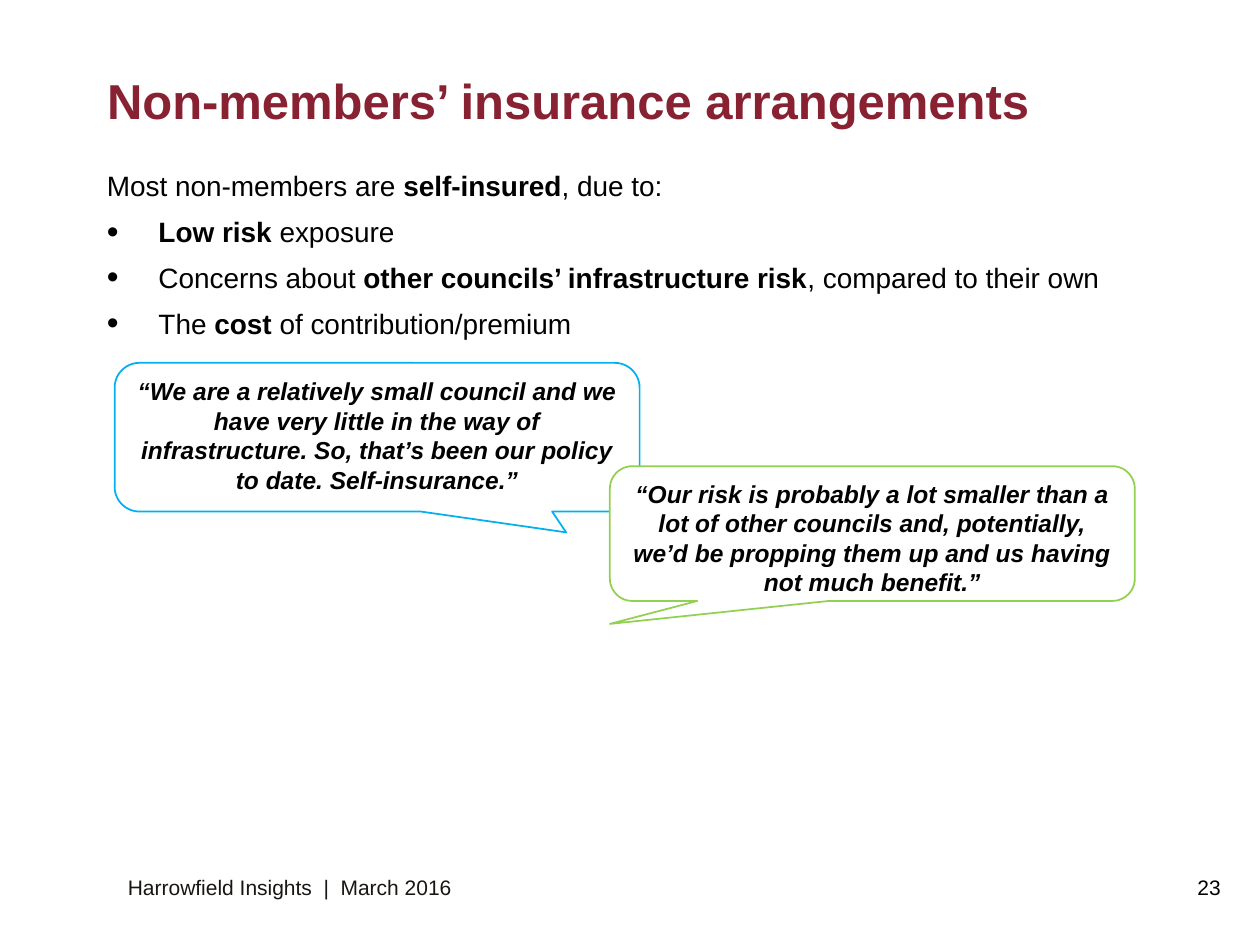
from lxml.etree import SubElement
from pptx import Presentation
from pptx.dml.color import RGBColor
from pptx.enum.shapes import MSO_SHAPE as Shape
from pptx.enum.text import MSO_ANCHOR as Anchor, PP_ALIGN as Align
from pptx.oxml.ns import qn
from pptx.util import Inches, Pt

COLUMNS, ROWS = 120, 90
SLIDE_WIDTH, SLIDE_HEIGHT = Inches(10), Inches(7.5)
BLACK = RGBColor(0x00, 0x00, 0x00)
CHARCOAL = RGBColor(0x18, 0x15, 0x12)
WHITE = RGBColor(0xFF, 0xFF, 0xFF)
MAROON = RGBColor(0x88, 0x22, 0x33)
BLUE = RGBColor(0x00, 0xB0, 0xF0)
GREEN = RGBColor(0x92, 0xD0, 0x50)

# Each reason is a list of (text, bold) runs.
LEAD = [("Most non-members are ", False), ("self-insured", True), (", due to:", False)]
REASONS = [
    [("Low risk ", True), ("exposure", False)],
    [("Concerns about ", False), ("other councils’ infrastructure risk", True),
     (", compared to their own", False)],
    [("The ", False), ("cost", True), (" of contribution/premium", False)],
]
# Box, outline colour, pointer tip and words of each quote.
QUOTES = [
    ((10.92, 34.56, 50, 14.16), BLUE, (0.36, 0.64),
     "“We are a relatively small council and we have very little in the way of "
     "infrastructure. So, that’s been our policy to date. Self-insurance.”"),
    ((58.08, 44.4, 50, 12.84), GREEN, (-0.5, 0.67),
     "“Our risk is probably a lot smaller than a lot of other councils and, "
     "potentially, we’d be propping them up and us having not much benefit.”"),
]


def place(box):
    """Turn left, top, width and height in grid units into slide lengths."""
    left, top, width, height = box
    column, row = SLIDE_WIDTH / COLUMNS, SLIDE_HEIGHT / ROWS
    return [int(length) for length in (left * column, top * row, width * column, height * row)]


def write(paragraph, text, size=16, color=BLACK, bold=False, italic=False, align=Align.LEFT):
    paragraph.alignment = align
    run = paragraph.add_run()
    run.text = text
    font = run.font
    font.name, font.size, font.bold, font.italic = "Arial", Pt(size), bold, italic
    font.color.rgb = color


def add_bullet(paragraph, indent):
    properties = paragraph._p.get_or_add_pPr()
    properties.set("marL", str(indent))
    properties.set("indent", str(-indent))
    SubElement(properties, qn("a:buSzPct"), val="120000")
    SubElement(properties, qn("a:buFont"), typeface="Arial")
    SubElement(properties, qn("a:buChar"), char="•")


def add_text_frame(slide, box):
    frame = slide.shapes.add_textbox(*place(box)).text_frame
    frame.word_wrap = True
    return frame


def add_title(slide, box, text):
    title = slide.shapes.title
    title.left, title.top, title.width, title.height = place(box)
    title.text_frame.vertical_anchor = Anchor.MIDDLE
    write(title.text_frame.paragraphs[0], text, size=28, color=MAROON, bold=True)


def add_reasons(slide, box):
    frame = add_text_frame(slide, box)
    for index, runs in enumerate([LEAD] + REASONS):
        paragraph = frame.add_paragraph() if index else frame.paragraphs[0]
        if index:
            add_bullet(paragraph, Inches(0.41))
            paragraph.space_before = Pt(4.2)
        paragraph.line_spacing = 1.15
        for text, bold in runs:
            write(paragraph, text, bold=bold)


def add_quote(slide, box, color, tip, text):
    callout = slide.shapes.add_shape(Shape.ROUNDED_RECTANGULAR_CALLOUT, *place(box))
    callout.shadow.inherit = False
    callout.adjustments[0], callout.adjustments[1] = tip
    callout.fill.solid()
    callout.fill.fore_color.rgb = WHITE
    callout.line.color.rgb = color
    callout.line.width = Pt(1)
    frame = callout.text_frame
    frame.word_wrap = True
    frame.vertical_anchor = Anchor.TOP
    write(frame.paragraphs[0], text, size=14, bold=True, italic=True, align=Align.CENTER)


def add_footer(slide, box, text, **style):
    write(add_text_frame(slide, box).paragraphs[0], text, size=12, **style)


def main():
    presentation = Presentation()
    presentation.slide_width, presentation.slide_height = SLIDE_WIDTH, SLIDE_HEIGHT
    slide = presentation.slides.add_slide(presentation.slide_layouts[5])
    add_footer(slide, (109.44, 82.68, 8, 3.6), "23", align=Align.RIGHT)
    add_footer(slide, (11, 82.68, 57, 3.6), "Harrowfield Insights  |  March 2016", color=CHARCOAL)
    add_title(slide, (9, 4, 102, 11), "Non-members’ insurance arrangements")
    add_reasons(slide, (9, 15, 102, 59))
    for quote in QUOTES:
        add_quote(slide, *quote)
    presentation.save("out.pptx")


if __name__ == "__main__":
    main()
